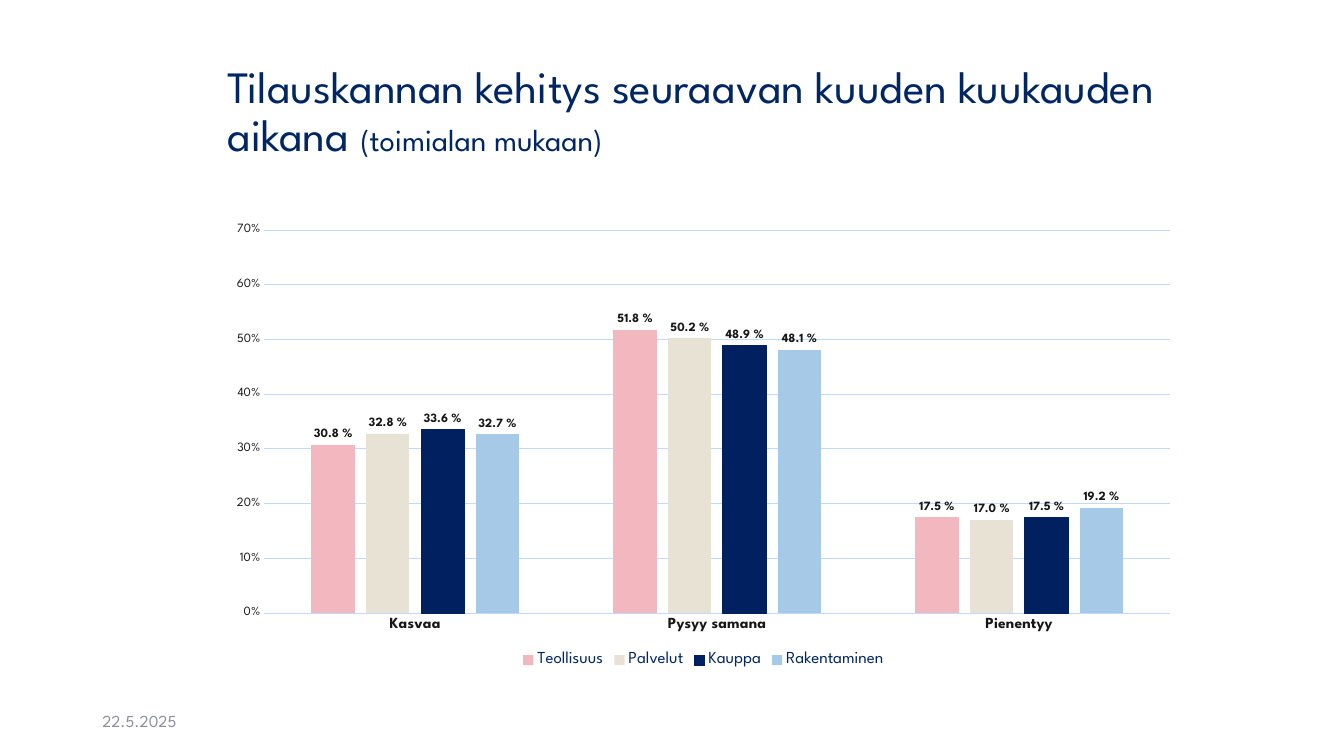
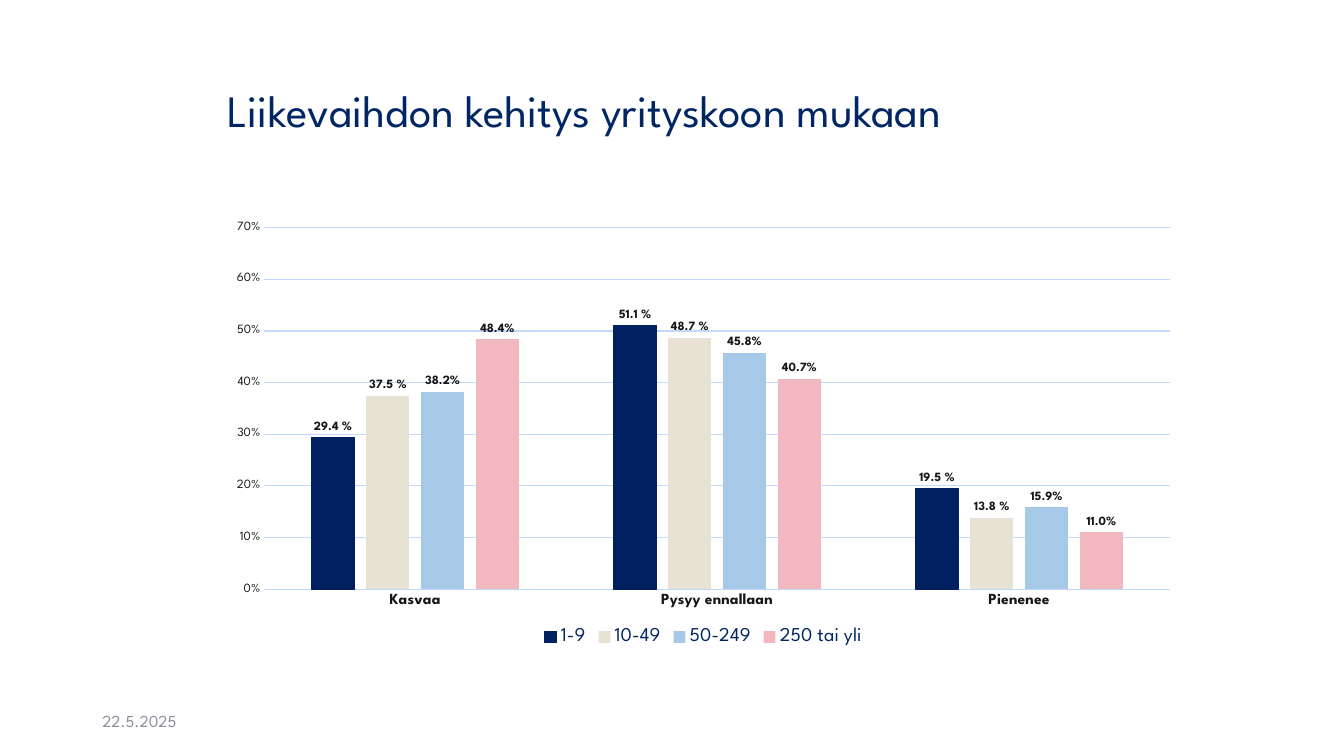
"""Build two survey slides with clustered column charts."""
from dataclasses import dataclass
from typing import NamedTuple

from pptx import Presentation
from pptx.chart.data import CategoryChartData
from pptx.dml.color import RGBColor as RGB
from pptx.enum.chart import XL_CHART_TYPE as ChartType
from pptx.enum.chart import XL_LABEL_POSITION as LabelPos
from pptx.enum.chart import XL_LEGEND_POSITION as LegendPos
from pptx.enum.chart import XL_TICK_MARK as Tick
from pptx.enum.text import MSO_ANCHOR as Anchor
from pptx.enum.text import MSO_AUTO_SIZE as AutoSize
from pptx.enum.text import PP_ALIGN as Align
from pptx.util import Emu, Pt

PX = 9525


class Box(NamedTuple):
    """A rectangle in px, 96 to the inch."""
    left: int
    top: int
    width: int
    height: int


@dataclass(frozen=True)
class Theme:
    """Colours, type sizes and frames that the slides share."""
    font: str = "League Spartan"
    title: str = "002663"
    text: str = "181717"
    muted: str = "8C8E9F"
    grid: str = "C1D9FF"
    pink: str = "F2B7BF"
    sand: str = "E8E2D5"
    navy: str = "002060"
    sky: str = "A5C9E7"
    title_size: int = 32
    subtitle_size: int = 22
    date_size: int = 12
    chart_size: int = 10
    category_size: int = 11
    value_size: int = 9
    line: float = 0.75
    title_box: Box = Box(207, 38, 985, 139)
    date_box: Box = Box(88, 667, 288, 38)


T = Theme()
SPACED, TIGHT = r"0.0\ %", "0.0%"
DATE = "22.5.2025"


@dataclass(frozen=True)
class Series:
    """One set of columns."""
    name: str
    values: tuple[float, ...]
    color: str
    fmt: str = SPACED


@dataclass(frozen=True)
class ChartSlide:
    """The content of one slide."""
    title: str
    subtitle: str
    box: Box
    legend_size: int
    categories: tuple[str, ...]
    series: tuple[Series, ...]


SLIDES = (
    ChartSlide(
        "Tilauskannan kehitys seuraavan kuuden kuukauden aikana ",
        "(toimialan mukaan)", Box(207, 205, 926, 435), 12,
        ("Kasvaa", "Pysyy samana", "Pienentyy"),
        (Series("Teollisuus", (0.308, 0.518, 0.175), T.pink),
         Series("Palvelut", (0.328, 0.502, 0.17), T.sand),
         Series("Kauppa", (0.336, 0.489, 0.175), T.navy),
         Series("Rakentaminen", (0.327, 0.481, 0.192), T.sky))),
    ChartSlide(
        "Liikevaihdon kehitys yrityskoon mukaan",
        "", Box(207, 203, 926, 416), 14,
        ("Kasvaa", "Pysyy ennallaan", "Pienenee"),
        (Series("1-9", (0.294, 0.511, 0.195), T.navy),
         Series("10-49", (0.375, 0.487, 0.138), T.sand),
         Series("50-249", (0.382, 0.458, 0.159), T.sky, TIGHT),
         Series("250 tai yli", (0.484, 0.407, 0.11), T.pink, TIGHT))),
)


def emu(box: Box) -> tuple[Emu, ...]:
    """Turn a px frame into EMU."""
    return tuple(Emu(v * PX) for v in box)


def assign(obj, **values) -> None:
    """Set attributes from a dict of format values."""
    for name, value in values.items():
        setattr(obj, name, value)


def style(font, size: int, color: str, bold: bool = False) -> None:
    """Format a font in the theme typeface."""
    assign(font, name=T.font, size=Pt(size), bold=bold)
    font.color.rgb = RGB.from_string(color)


def stroke(line, color: str) -> None:
    """Give a line a colour and the theme width."""
    line.color.rgb = RGB.from_string(color)
    line.width = Pt(T.line)


def add_run(p, text: str, size: int, color: str) -> None:
    """Append a formatted run."""
    r = p.add_run()
    r.text = text
    style(r.font, size, color)


def add_title(s, spec: ChartSlide) -> None:
    """Place the title and its smaller second part."""
    sp = s.shapes.title
    assign(sp, **dict(zip(Box._fields, emu(T.title_box))))
    tf = sp.text_frame
    assign(tf, word_wrap=True, auto_size=AutoSize.NONE, vertical_anchor=Anchor.MIDDLE)
    p = tf.paragraphs[0]
    assign(p, alignment=Align.LEFT, line_spacing=0.9, space_before=Pt(0))
    add_run(p, spec.title, T.title_size, T.title)
    if spec.subtitle:
        add_run(p, spec.subtitle, T.subtitle_size, T.title)


def add_date(s) -> None:
    """Place the footer date."""
    tf = s.shapes.add_textbox(*emu(T.date_box)).text_frame
    assign(tf, word_wrap=True, vertical_anchor=Anchor.MIDDLE)
    p = tf.paragraphs[0]
    p.space_after = Pt(6)
    add_run(p, DATE, T.date_size, T.muted)


def format_axes(chart) -> None:
    """Format both axes and the gridlines."""
    ticks = dict(major_tick_mark=Tick.NONE, minor_tick_mark=Tick.NONE)
    cat, val = chart.category_axis, chart.value_axis
    assign(cat, has_major_gridlines=False, **ticks)
    stroke(cat.format.line, T.grid)
    style(cat.tick_labels.font, T.category_size, T.text, True)
    assign(val, minimum_scale=0, maximum_scale=0.7, major_unit=0.1,
           has_major_gridlines=True, **ticks)
    val.format.line.fill.background()
    stroke(val.major_gridlines.format.line, T.grid)
    assign(val.tick_labels, number_format="0%", number_format_is_linked=False)
    style(val.tick_labels.font, T.value_size, T.text)


def format_series(ser, item: Series) -> None:
    """Colour a series and label its columns."""
    ser.invert_if_negative = False
    ser.format.fill.solid()
    ser.format.fill.fore_color.rgb = RGB.from_string(item.color)
    if item.color == T.navy:
        stroke(ser.format.line, item.color)
    else:
        ser.format.line.fill.background()
    labels = ser.data_labels
    assign(labels, show_value=True, position=LabelPos.OUTSIDE_END,
           number_format=item.fmt, number_format_is_linked=False)
    style(labels.font, T.value_size, T.text, True)


def add_columns(s, spec: ChartSlide) -> None:
    """Add the column chart."""
    data = CategoryChartData(number_format="0.0%")
    data.categories = spec.categories
    for item in spec.series:
        data.add_series(item.name, item.values)
    chart = s.shapes.add_chart(ChartType.COLUMN_CLUSTERED, *emu(spec.box), data).chart
    assign(chart, has_title=False, has_legend=True)
    style(chart.font, T.chart_size, T.title)
    assign(chart.legend, position=LegendPos.BOTTOM, include_in_layout=False)
    style(chart.legend.font, spec.legend_size, T.title)
    format_axes(chart)
    plot = chart.plots[0]
    assign(plot, gap_width=219, overlap=-27, vary_by_categories=False)
    for ser, item in zip(plot.series, spec.series):
        format_series(ser, item)


def main() -> None:
    """Build and save the deck."""
    prs = Presentation()
    assign(prs, slide_width=Emu(1280 * PX), slide_height=Emu(720 * PX))
    layout = prs.slide_layouts.get_by_name("Title Only")
    for spec in SLIDES:
        s = prs.slides.add_slide(layout)
        add_date(s)
        add_title(s, spec)
        add_columns(s, spec)
    prs.save("out.pptx")


if __name__ == "__main__":
    main()
